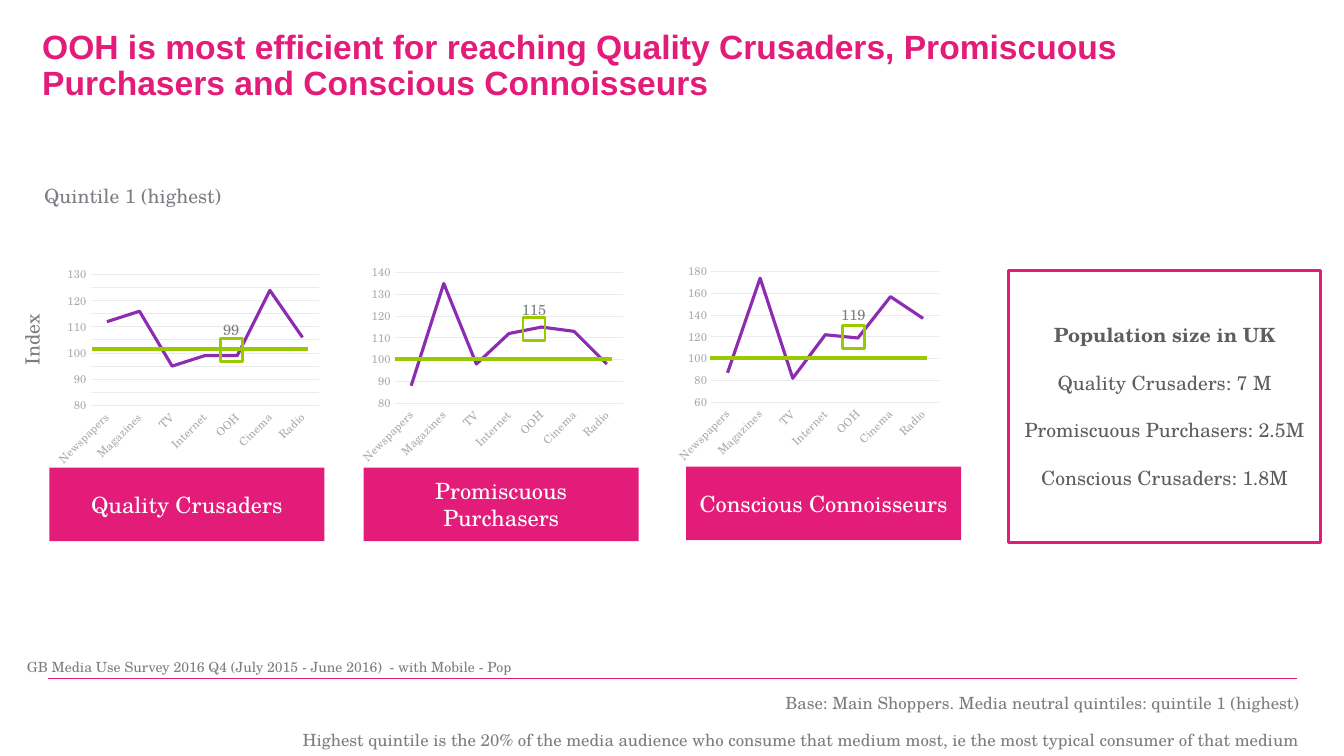
from dataclasses import dataclass
from typing import NamedTuple

from lxml.etree import SubElement
from pptx import Presentation
from pptx.chart.data import CategoryChartData as ChartData
from pptx.dml.color import RGBColor
from pptx.enum.chart import XL_CHART_TYPE as Kind, XL_TICK_MARK as Tick
from pptx.enum.shapes import MSO_CONNECTOR as Link, MSO_SHAPE as Form
from pptx.enum.text import MSO_ANCHOR as Anchor, PP_ALIGN as Align
from pptx.oxml import parse_xml
from pptx.oxml.ns import nsdecls, qn
from pptx.util import Emu, Inches, Pt

PINK = RGBColor(0xE3, 0x1C, 0x79)
GREEN = RGBColor(0x99, 0xC9, 0x00)
PURPLE = RGBColor(0x8B, 0x2C, 0xB1)
GREY = RGBColor(0x7A, 0x7D, 0x81)
DARK = RGBColor(0x5C, 0x5E, 0x61)
PALE = RGBColor(0xA8, 0xAA, 0xAD)
GRID = RGBColor(0xEB, 0xEB, 0xEC)
WHITE = RGBColor(0xFF, 0xFF, 0xFF)
SERIF = "TeX Gyre Schola"
MEDIA = ["Newspapers", "Magazines", "TV", "Internet", "OOH", "Cinema", "Radio"]
OOH = MEDIA.index("OOH")
WIDE, HIGH = Inches(13.34), Inches(7.5)


class Spot(NamedTuple):
    """A point in percent of the slide's width and height."""
    x: float
    y: float


class Size(NamedTuple):
    """An extent in percent of the slide's width and height."""
    w: float
    h: float


PLOT, BAR = Size(20.46, 27.87), Size(20.46, 9.73)
MARK, LABEL = Size(1.65, 3.07), Size(3.45, 3.73)
SPAN = 16.12


@dataclass
class Panel:
    name: str
    vals: list[int]
    low: int
    top: int
    step: int
    plot: Spot
    bar: Spot
    norm: Spot
    mark: Spot
    label: Spot


@dataclass
class Note:
    lines: list[str]
    spot: Spot
    size: Size
    pts: float
    color: RGBColor = GREY
    font: str = SERIF
    bold: bool = False
    align: Align = Align.LEFT
    wrap: bool = True
    gap: float = 0
    lead: float = 1
    turn: float = 0


PANELS = [
    Panel("Quality Crusaders", [112, 116, 95, 99, 99, 124, 106], 80, 130, 5,
          Spot(3.67, 34.67), Spot(3.67, 61.87), Spot(6.82, 46.13),
          Spot(16.42, 44.8), Spot(15.48, 41.73)),
    Panel("Promiscuous Purchasers", [88, 135, 98, 112, 115, 113, 98], 80, 140, 10,
          Spot(26.31, 34.4), Spot(27.06, 61.87), Spot(29.39, 47.47),
          Spot(38.91, 42), Spot(38.01, 39.07)),
    Panel("Conscious Connoisseurs", [87, 174, 82, 122, 119, 157, 137], 60, 180, 20,
          Spot(49.85, 34.27), Spot(51.05, 61.73), Spot(52.85, 47.33),
          Spot(62.67, 43.07), Spot(61.77, 39.73)),
]
NOTES = [
    Note(["OOH is most efficient for reaching Quality Crusaders, Promiscuous "
          "Purchasers and Conscious Connoisseurs"],
         Spot(2.4, 3.33), Size(92.88, 8.93), 24, PINK, "Arial", True, lead=0.9),
    Note(["Quintile 1 (highest)"], Spot(2.55, 23.73), Size(14.77, 7.6), 14, wrap=False),
    Note(["Index"], Spot(-5.92, 42.67), Size(16.64, 4.53), 14, align=Align.CENTER, turn=270),
    Note(["GB Media Use Survey 2016 Q4 (July 2015 - June 2016)  - with Mobile - Pop"],
         Spot(1.27, 86.4), Size(50, 3.6), 10),
    Note(["Base: Main Shoppers. Media neutral quintiles: quintile 1 (highest)",
          "Highest quintile is the 20% of the media audience who consume that "
          "medium most, ie the most typical consumer of that medium"],
         Spot(6.22, 90.93), Size(91.23, 9.07), 12, align=Align.RIGHT, gap=12),
]
PEOPLE = ["Population size in UK", "Quality Crusaders: 7 M",
          "Promiscuous Purchasers: 2.5M", "Conscious Crusaders: 1.8M"]


def across(share: float) -> Emu:
    return Emu(round(WIDE * share / 100))


def down(share: float) -> Emu:
    return Emu(round(HIGH * share / 100))


def place(spot: Spot, size: Size) -> tuple[Emu, Emu, Emu, Emu]:
    return across(spot.x), down(spot.y), across(size.w), down(size.h)


def write(frame, lines: list[str], pts: float, color: RGBColor, font: str = SERIF,
          bold: bool = False, align: Align = Align.CENTER, gap: float = 0,
          lead: float = 1) -> None:
    frame.text = "\n".join(lines)
    for rank, para in enumerate(frame.paragraphs):
        para.alignment, para.line_spacing = align, lead
        if rank and gap:
            para.space_before = Pt(gap)
        for run in para.runs:
            face = run.font
            face.size, face.name, face.bold = Pt(pts), font, bold
            face.color.rgb = color


def add_note(slide, note: Note) -> None:
    box = slide.shapes.add_textbox(*place(note.spot, note.size))
    box.rotation = note.turn
    box.text_frame.word_wrap = note.wrap
    write(box.text_frame, note.lines, note.pts, note.color, note.font,
          note.bold, note.align, note.gap, note.lead)


def add_box(slide, spot: Spot, size: Size, fill: RGBColor | None = None,
            edge: RGBColor | None = None):
    box = slide.shapes.add_shape(Form.RECTANGLE, *place(spot, size))
    box.shadow.inherit = False
    if fill is None:
        box.fill.background()
    else:
        box.fill.solid()
        box.fill.fore_color.rgb = fill
    if edge is None:
        box.line.fill.background()
    else:
        box.line.color.rgb, box.line.width = edge, Pt(2)
    box.text_frame.word_wrap = True
    box.text_frame.vertical_anchor = Anchor.MIDDLE
    return box


def add_rule(slide, spot: Spot, span: float, color: RGBColor, pts: float) -> None:
    y = down(spot.y)
    rule = slide.shapes.add_connector(
        Link.STRAIGHT, across(spot.x), y, across(spot.x + span), y)
    rule.line.color.rgb, rule.line.width = color, Pt(pts)
    SubElement(rule.element.spPr, qn("a:effectLst"))


def add_plot(slide, panel: Panel) -> None:
    data = ChartData()
    data.categories = MEDIA
    data.add_series("Series 1", panel.vals)
    chart = slide.shapes.add_chart(Kind.LINE, *place(panel.plot, PLOT), data).chart
    chart.has_legend = chart.has_title = False
    chart.font.size, chart.font.name = Pt(8), SERIF
    chart.font.color.rgb = GREY
    cats, vals = chart.category_axis, chart.value_axis
    for axis in (cats, vals):
        axis.major_tick_mark = axis.minor_tick_mark = Tick.NONE
        face = axis.tick_labels.font
        face.size, face.name = Pt(8), SERIF
        face.color.rgb = PALE
    cats.format.line.color.rgb, cats.format.line.width = GRID, Pt(0.75)
    cats._element.find(qn("c:txPr")).find(qn("a:bodyPr")).set("rot", "-2700000")
    vals.format.line.fill.background()
    vals.minimum_scale, vals.maximum_scale = panel.low, panel.top
    vals.major_unit = panel.step
    mesh = vals.major_gridlines.format.line
    mesh.color.rgb, mesh.width = GRID, Pt(0.75)
    chart.plots[0].vary_by_categories = False
    trace = chart.plots[0].series[0]
    trace.smooth = False
    trace.format.line.color.rgb, trace.format.line.width = PURPLE, Pt(2.25)
    area = chart._chartSpace.chart.plotArea
    for old in area.findall(qn("c:layout")):
        area.remove(old)
    parts = "".join(f'<c:{tag} val="{val}"/>' for tag, val in (
        ("layoutTarget", "inner"), ("xMode", "edge"), ("yMode", "edge"),
        ("x", 0.15), ("y", 0.06), ("w", 0.83), ("h", 0.62)))
    area.insert(0, parse_xml(f'<c:layout {nsdecls("c")}><c:manualLayout>{parts}'
                             '</c:manualLayout></c:layout>'))


def add_panel(slide, panel: Panel) -> None:
    bar = add_box(slide, panel.bar, BAR, fill=PINK)
    bar.text_frame.margin_left = bar.text_frame.margin_right = Inches(0.13)
    write(bar.text_frame, [panel.name], 16, WHITE)
    add_plot(slide, panel)
    add_rule(slide, panel.norm, SPAN, GREEN, 2.75)
    add_box(slide, panel.mark, MARK, edge=GREEN)
    add_note(slide, Note([str(panel.vals[OOH])], panel.label, LABEL, 10.5,
                         align=Align.CENTER, wrap=False))


def main() -> None:
    deck = Presentation()
    deck.slide_width, deck.slide_height = WIDE, HIGH
    slide = deck.slides.add_slide(deck.slide_layouts[6])
    add_rule(slide, Spot(3.6, 89.73), 92.88, PINK, 1)
    for panel in PANELS:
        add_panel(slide, panel)
    people = add_box(slide, Spot(75.04, 35.73), Size(23.24, 36), edge=PINK)
    write(people.text_frame, PEOPLE, 14, DARK, gap=17)
    people.text_frame.paragraphs[0].runs[0].font.bold = True
    for note in NOTES:
        add_note(slide, note)
    deck.save("out.pptx")


if __name__ == "__main__":
    main()
